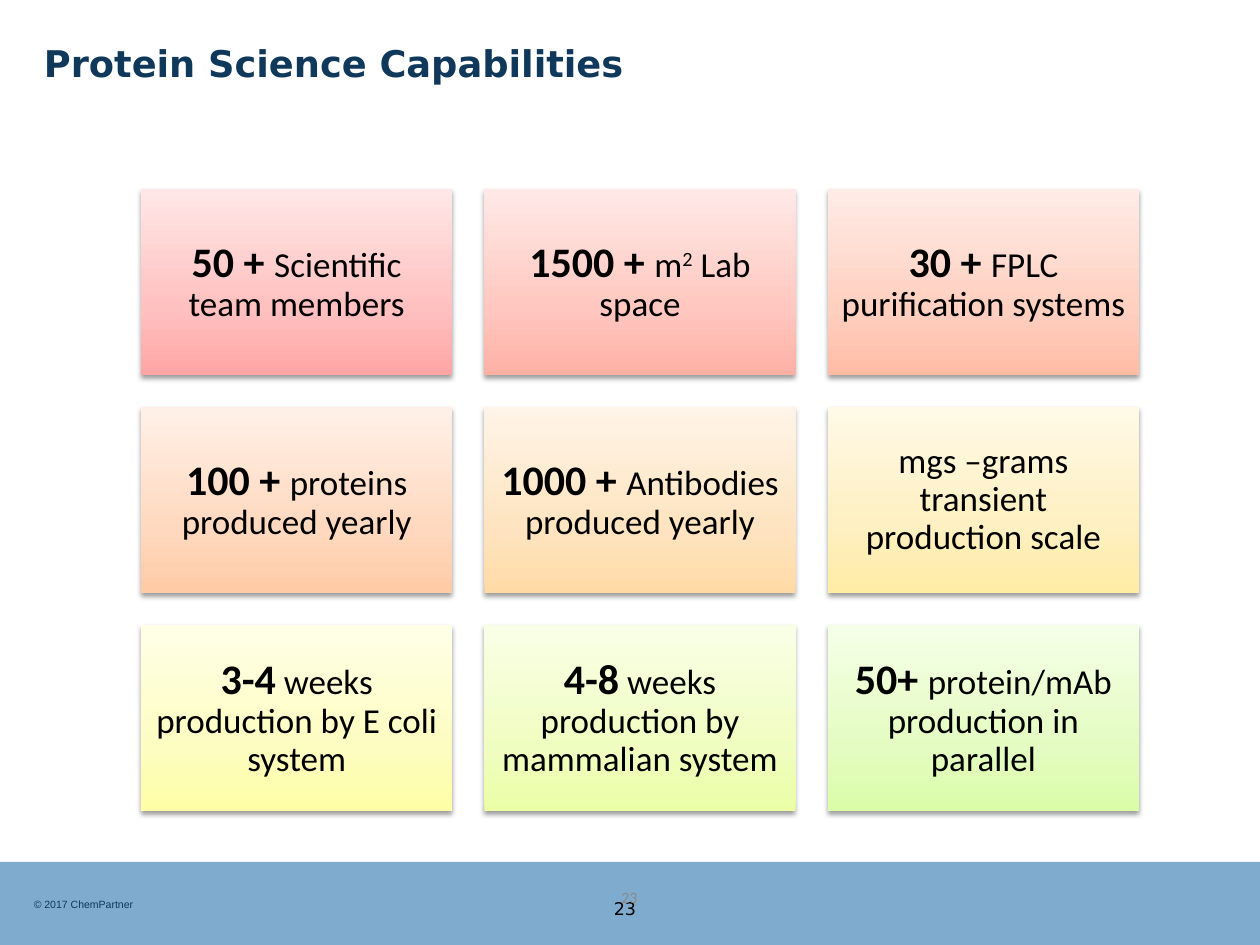
from dataclasses import dataclass
from typing import NamedTuple

from lxml.etree import SubElement
from pptx import Presentation
from pptx.dml.color import RGBColor
from pptx.enum.shapes import MSO_SHAPE as Preset
from pptx.enum.text import MSO_ANCHOR as Anchor, PP_ALIGN as Align
from pptx.oxml import parse_xml
from pptx.oxml.ns import nsdecls, qn
from pptx.util import Inches, Pt


@dataclass(frozen=True)
class Theme:
    band: str = "005B9E"
    navy: str = "0F385A"
    ink: str = "000000"
    grey: str = "898989"
    heading_font: str = "DejaVu Sans"
    body_font: str = "Calibri"
    small_font: str = "Arial"
    title_size: int = 21
    figure_size: int = 24
    label_size: int = 20
    number_size: int = 10
    faint_number_size: int = 9
    copyright_size: int = 6


class Area(NamedTuple):
    """Left, top, width and height in percent of the slide."""
    left: float
    top: float
    width: float
    height: float


class Run(NamedTuple):
    text: str
    font: str
    size: float
    color: str
    bold: bool = False
    baseline: int = 0


class Label(NamedTuple):
    area: Area
    run: Run
    align: Align = Align.LEFT
    anchor: Anchor = Anchor.TOP


class Capability(NamedTuple):
    figure: str
    detail: str
    shades: tuple[str, str, str]
    superscript: str = ""
    ending: str = ""


THEME = Theme()
WIDTH, HEIGHT = Inches(10), Inches(7.5)
COLUMNS = 3
FIRST_CARD = Area(11.2, 20, 24.7, 19.73)
COLUMN_STEP, ROW_STEP = 27.25, 23.07
GRADIENT_STOPS = (0, 35, 100)
BAND = Area(0, 91.2, 100, 8.8)

LABELS = (
    Label(Area(1.7, 94.4, 50, 2.67),
          Run("© 2017 ChemPartner", THEME.small_font, THEME.copyright_size, THEME.navy)),
    Label(Area(44.3, 94.4, 10.6, 3.73),
          Run("23", THEME.heading_font, THEME.number_size, THEME.ink), Align.CENTER),
    Label(Area(2.5, 0, 94.2, 13.33),
          Run("Protein Science Capabilities", THEME.heading_font, THEME.title_size,
              THEME.navy, bold=True), anchor=Anchor.MIDDLE),
    Label(Area(38.3, 92.27, 23.3, 5.33),
          Run("23", THEME.body_font, THEME.faint_number_size, THEME.grey),
          Align.CENTER, Anchor.MIDDLE),
)

CAPABILITIES = (
    Capability("50 + ", "Scientific team members", ("FFA6A5", "FFC0BF", "FFE7E7")),
    Capability("1500 + ", "m", ("FFB0A5", "FFC7BF", "FFE9E7"), "2", " Lab space"),
    Capability("30 + ", "FPLC purification systems", ("FFBCA5", "FFCFBF", "FFECE7")),
    Capability("100 + ", "proteins produced yearly", ("FFCAA5", "FFD9BF", "FFF0E7")),
    Capability("1000 + ", "Antibodies produced yearly", ("FFDAA5", "FEE4C0", "FFF4E7")),
    Capability("", "mgs –grams transient production scale", ("FFECA5", "FEF0C0", "FFF9E7")),
    Capability("3-4", " weeks production by E coli system", ("FEFEA6", "FDFDC1", "FFFFE7")),
    Capability("4-8", " weeks production by mammalian system", ("EBFEA6", "F0FDC1", "F9FFE7")),
    Capability("50+ ", "protein/mAb production in parallel", ("DAFDA7", "E4FCC2", "F5FFE7")),
)


def place(area: Area) -> tuple[int, int, int, int]:
    """Turn percentages into slide units."""
    return tuple(round(share * side / 100)
                 for share, side in zip(area, (WIDTH, HEIGHT) * 2))


def add_run(paragraph, run: Run) -> None:
    piece = paragraph.add_run()
    piece.text = run.text
    looks = {"name": run.font, "size": Pt(run.size), "bold": run.bold}
    for attribute, value in looks.items():
        setattr(piece.font, attribute, value)
    piece.font.color.rgb = RGBColor.from_string(run.color)
    if run.baseline:
        piece.font._element.set("baseline", str(run.baseline * 1000))


def add_label(slide, label: Label) -> None:
    frame = slide.shapes.add_textbox(*place(label.area)).text_frame
    frame.word_wrap = True
    frame.vertical_anchor = label.anchor
    paragraph = frame.paragraphs[0]
    paragraph.alignment = label.align
    add_run(paragraph, label.run)


def add_panel(slide, area: Area, color: str):
    """Add a flat rectangle without line or shadow."""
    panel = slide.shapes.add_shape(Preset.RECTANGLE, *place(area))
    panel.shadow.inherit = False
    panel.line.fill.background()
    panel.fill.solid()
    panel.fill.fore_color.rgb = RGBColor.from_string(color)
    return panel


def add_footer_band(slide) -> None:
    band = add_panel(slide, BAND, THEME.band)
    tint = band._element.spPr.find(qn("a:solidFill")).find(qn("a:srgbClr"))
    SubElement(tint, qn("a:alpha"), val="50000")


def shade_card(card, shades: tuple[str, str, str]) -> None:
    """Give a card its upward gradient and soft drop shadow."""
    properties = card._element.spPr
    stops = "".join(f'<a:gs pos="{stop * 1000}"><a:srgbClr val="{shade}"/></a:gs>'
                    for stop, shade in zip(GRADIENT_STOPS, shades))
    gradient = parse_xml(f'<a:gradFill {nsdecls("a")} rotWithShape="1"><a:gsLst>{stops}'
                         '</a:gsLst><a:lin ang="16200000" scaled="1"/></a:gradFill>')
    properties.replace(properties.find(qn("a:solidFill")), gradient)
    shadow = SubElement(properties.find(qn("a:effectLst")), qn("a:outerShdw"),
                        blurRad=str(Pt(3.1)), dist=str(Pt(1.6)), dir="5400000",
                        rotWithShape="0")
    shadow_color = SubElement(shadow, qn("a:srgbClr"), val=THEME.ink)
    SubElement(shadow_color, qn("a:alpha"), val="38000")


def add_card(slide, position: int, capability: Capability) -> None:
    row, column = divmod(position, COLUMNS)
    area = FIRST_CARD._replace(left=FIRST_CARD.left + column * COLUMN_STEP,
                               top=FIRST_CARD.top + row * ROW_STEP)
    card = add_panel(slide, area, capability.shades[0])
    shade_card(card, capability.shades)

    frame = card.text_frame
    inset = Inches(0.1 if capability.figure else 0.08)
    layout = {"word_wrap": True, "vertical_anchor": Anchor.MIDDLE}
    layout |= {f"margin_{side}": inset for side in ("left", "top", "right", "bottom")}
    for attribute, value in layout.items():
        setattr(frame, attribute, value)
    paragraph = frame.paragraphs[0]
    paragraph.alignment = Align.CENTER
    paragraph.line_spacing = 0.9

    body, ink, size = THEME.body_font, THEME.ink, THEME.label_size
    runs = (
        Run(capability.figure, body, THEME.figure_size, ink, bold=True),
        Run(capability.detail, body, size, ink),
        Run(capability.superscript, body, size, ink, baseline=30),
        Run(capability.ending, body, size, ink),
    )
    for run in runs:
        if run.text:
            add_run(paragraph, run)


def main() -> None:
    deck = Presentation()
    deck.slide_width, deck.slide_height = WIDTH, HEIGHT
    slide = deck.slides.add_slide(deck.slide_layouts[6])
    add_footer_band(slide)
    for label in LABELS:
        add_label(slide, label)
    for position, capability in enumerate(CAPABILITIES):
        add_card(slide, position, capability)
    deck.save("out.pptx")


if __name__ == "__main__":
    main()
